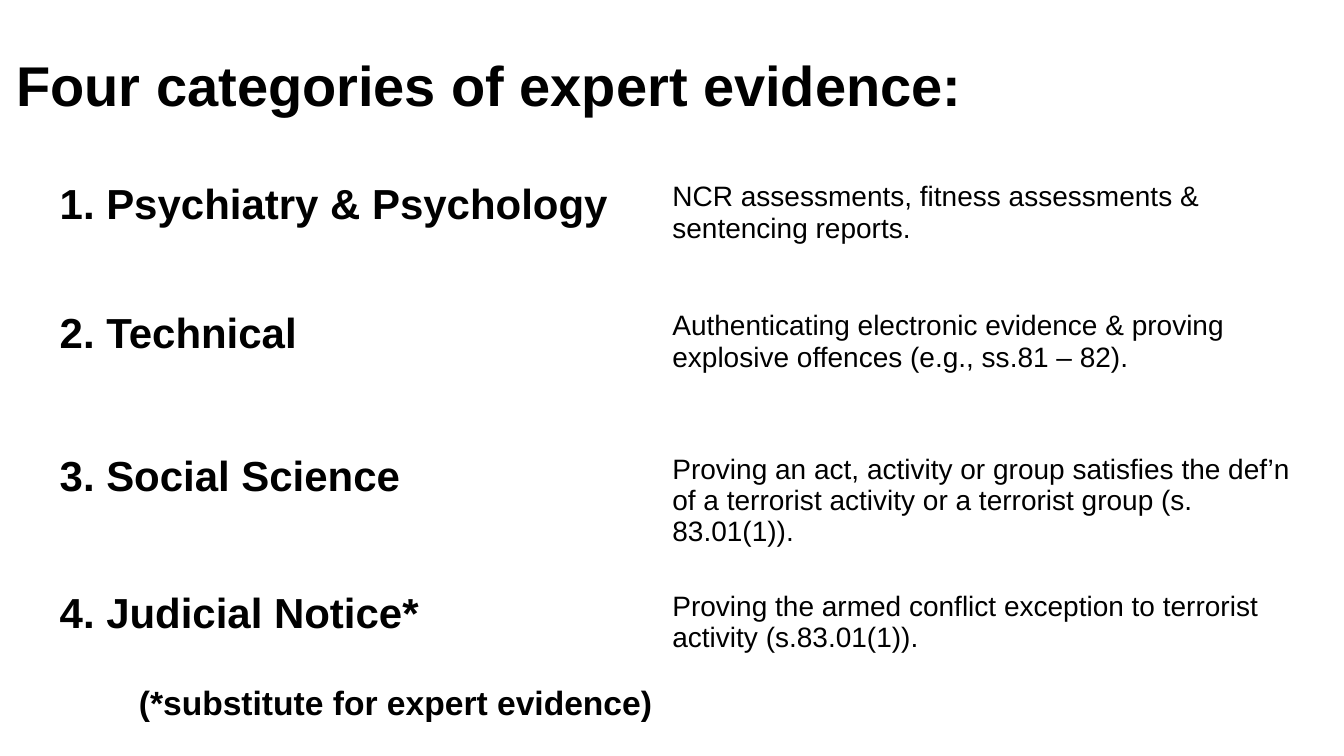
import pptx
import pptx.dml.color
import pptx.enum.text
import pptx.util
from pptx.util import Cm

BLACK = pptx.dml.color.RGBColor(0, 0, 0)
WHITE = pptx.dml.color.RGBColor(255, 255, 255)
ALIGN = pptx.enum.text.PP_ALIGN

CATEGORIES = [
    ("1. Psychiatry & Psychology",
     "NCR assessments, fitness assessments & sentencing reports."),
    ("2. Technical",
     "Authenticating electronic evidence & proving explosive offences (e.g., ss.81 – 82)."),
    ("3. Social Science",
     "Proving an act, activity or group satisfies the def’n of a terrorist activity "
     "or a terrorist group (s. 83.01(1))."),
    ("4. Judicial Notice*",
     "Proving the armed conflict exception to terrorist activity (s.83.01(1))."),
]
FOOTNOTE = "(*substitute for expert evidence)"
COLUMN_WIDTHS = [Cm(15.44), Cm(16.56)]
ROW_HEIGHTS = [Cm(3.25), Cm(3.61), Cm(3.45), Cm(3.81)]


class SlideBuilder:
    font_name = "Arial"

    def __init__(self, prs):
        self.s = prs.slides.add_slide(prs.slide_layouts[5])
        self.s.background.fill.solid()
        self.s.background.fill.fore_color.rgb = WHITE

    def set_text(self, p, text, size, bold=False, align=ALIGN.LEFT):
        p.text = text
        p.alignment = align
        p.font.name = self.font_name
        p.font.size = pptx.util.Pt(size)
        p.font.bold = bold
        p.font.color.rgb = BLACK

    def title(self, text, left, top, width, height):
        sp = self.s.shapes.title
        sp.left, sp.top, sp.width, sp.height = left, top, width, height
        tf = sp.text_frame
        tf.word_wrap = True
        tf.auto_size = pptx.enum.text.MSO_AUTO_SIZE.NONE
        tf.vertical_anchor = pptx.enum.text.MSO_ANCHOR.MIDDLE
        p = tf.paragraphs[0]
        self.set_text(p, text, 40, bold=True)
        p.line_spacing = 0.9

    def table(self, rows, left, top, widths, heights):
        """Add a plain table with bold headings in its first column."""
        frame = self.s.shapes.add_table(len(rows), len(widths), left, top,
                                        sum(widths), sum(heights))
        table = frame.table
        table.first_row = table.horz_banding = False
        for column, width in zip(table.columns, widths):
            column.width = width
        for row, height, texts in zip(table.rows, heights, rows):
            row.height = height
            for i, (cell, text) in enumerate(zip(row.cells, texts)):
                cell.fill.background()
                heading = i == 0
                self.set_text(cell.text_frame.paragraphs[0], text,
                              30 if heading else 20, bold=heading)
        return table

    def footnote(self, cell, text):
        p = cell.text_frame.add_paragraph()
        self.set_text(p, text, 24, bold=True, align=ALIGN.RIGHT)
        p.space_before = pptx.util.Pt(34)


def main():
    prs = pptx.Presentation()
    prs.slide_width, prs.slide_height = Cm(33.87), Cm(19.05)
    slide = SlideBuilder(prs)
    slide.title("Four categories of expert evidence:",
                Cm(0.16), Cm(0.38), Cm(31.83), Cm(3.68))
    table = slide.table(CATEGORIES, Cm(1.25), Cm(4.45), COLUMN_WIDTHS, ROW_HEIGHTS)
    slide.footnote(table.cell(len(CATEGORIES) - 1, 0), FOOTNOTE)
    prs.save("out.pptx")


if __name__ == "__main__":
    main()
